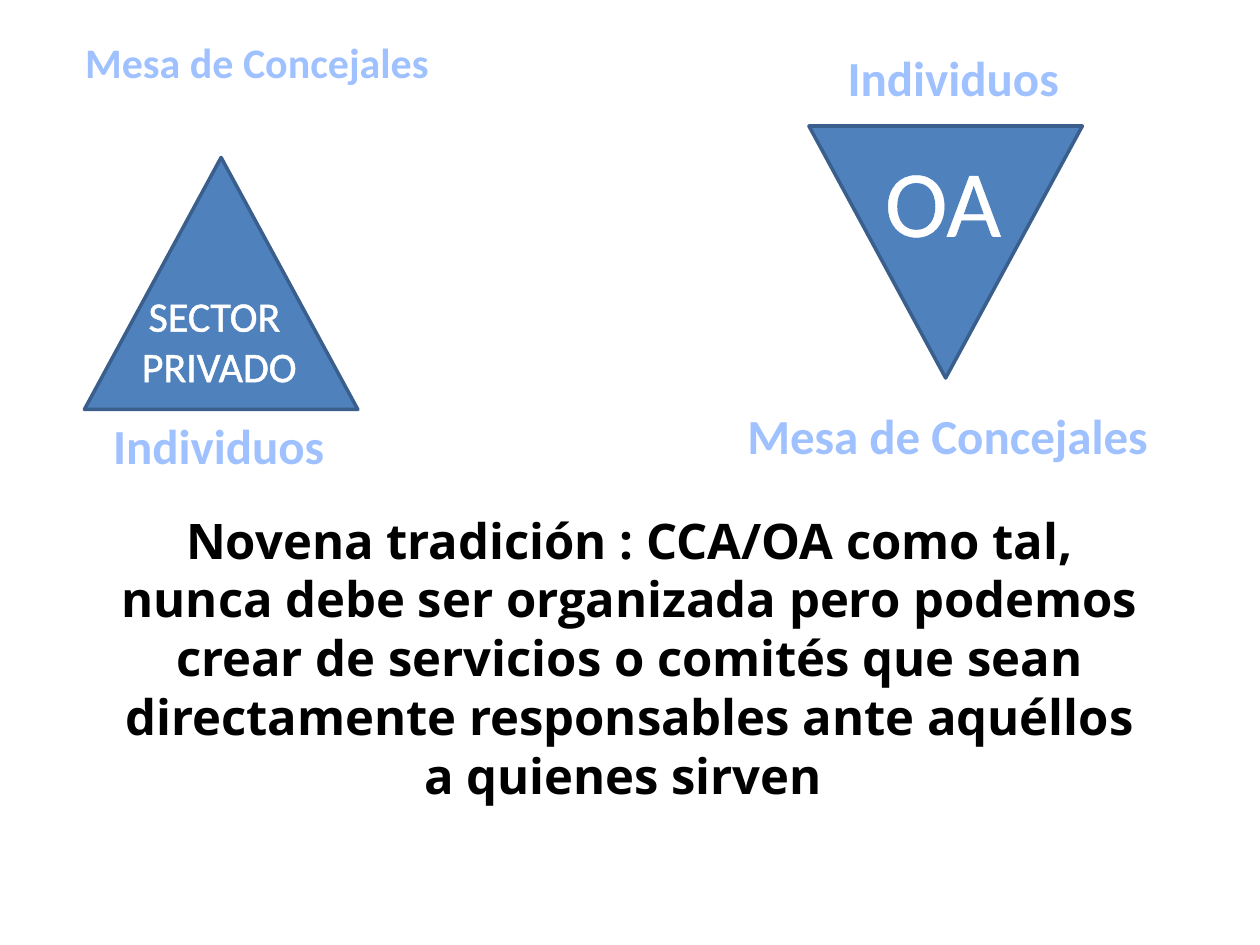
from lxml import etree
from pptx import Presentation
from pptx.dml.color import RGBColor
from pptx.enum import shapes, text
from pptx.oxml import ns
from pptx.util import Inches, Pt

WHITE, BLACK, BLUE, EDGE, RIM = "FFFFFF", "000000", "4F81BD", "3A5F8C", "467AB8"
SHEEN = [(0, "BFD3F9"), (9, "A0C1FF"), (50, "003D85"), (79, "A0C1FF"), (100, "BFD3F9")]


def rgb(value):
    return RGBColor.from_string(value)


def add_text(box, lines, size, font="Calibri", color=None, bold=False,
             outline=None, wrap=False):
    """Add centred text; without a color the letters get the sheen gradient."""
    frame = slide.shapes.add_textbox(*map(Inches, box)).text_frame
    frame.word_wrap = wrap
    frame.auto_size = text.MSO_AUTO_SIZE.SHAPE_TO_FIT_TEXT
    for i, line in enumerate(lines):
        paragraph = frame.paragraphs[0] if i == 0 else frame.add_paragraph()
        paragraph.alignment = text.PP_ALIGN.CENTER
        run = paragraph.add_run()
        run.text = line
        for key, value in {"size": Pt(size), "name": font, "bold": bold}.items():
            setattr(run.font, key, value)
        if color:
            run.font.color.rgb = rgb(color)
        else:
            stops = "".join(f'<a:gs pos="{pos * 1000}"><a:srgbClr val="{stop}"/></a:gs>'
                            for pos, stop in SHEEN)
            run.font._element.insert(0, etree.fromstring(
                f'<a:gradFill {ns.nsdecls("a")}><a:gsLst>{stops}</a:gsLst>'
                '<a:lin ang="5400000"/></a:gradFill>'))
        if outline:
            rim, width = outline
            run.font._element.insert(0, etree.fromstring(
                f'<a:ln {ns.nsdecls("a")} w="{Pt(width)}"><a:solidFill>'
                f'<a:srgbClr val="{rim}"/></a:solidFill></a:ln>'))


prs = Presentation()
prs.slide_width, prs.slide_height = Inches(10), Inches(7.5)
slide = prs.slides.add_slide(prs.slide_layouts[6])

# Pyramids: private sector upright, OA inverted
for left, top, rotation in [(0.67, 1.25, 0), (6.42, 1, 180)]:
    pyramid = slide.shapes.add_shape(
        shapes.MSO_SHAPE.ISOSCELES_TRIANGLE,
        Inches(left), Inches(top), Inches(2.17), Inches(2))
    pyramid.rotation = rotation
    pyramid.shadow.inherit = False
    pyramid.fill.solid()
    pyramid.fill.fore_color.rgb = rgb(BLUE)
    pyramid.line.color.rgb = rgb(EDGE)
    pyramid.line.width = Pt(2)

# Names inside the pyramids
for box, lines, size in [
    ((1.02, 2.25, 1.44, 0.91), ["SECTOR ", "PRIVADO"], 24),
    ((6.92, 1.08, 1.13, 1.01), ["OA"], 54),
]:
    add_text(box, lines, size, color=WHITE, outline=(WHITE, 1.45))

# Labels above and below each pyramid
for box, label, size in [
    ((0.56, 0.24, 2.96, 0.5), "Mesa de Concejales", 24),
    ((0.79, 3.25, 1.89, 0.57), "Individuos", 28),
    ((6.62, 0.33, 1.89, 0.57), "Individuos", 28),
    ((5.81, 3.17, 3.42, 0.57), "Mesa de Concejales", 28),
]:
    add_text(box, [label], size, bold=True, outline=(RIM, 0.83))

# Ninth tradition
tradition = ("Novena tradición : CCA/OA como tal, nunca debe ser organizada pero "
             "podemos crear de servicios o comités que sean directamente "
             "responsables ante aquéllos a quienes sirven ")
add_text((0.83, 4, 8.33, 2.46), [tradition], 28, font="Open Sans",
         color=BLACK, bold=True, wrap=True)

prs.save("out.pptx")
